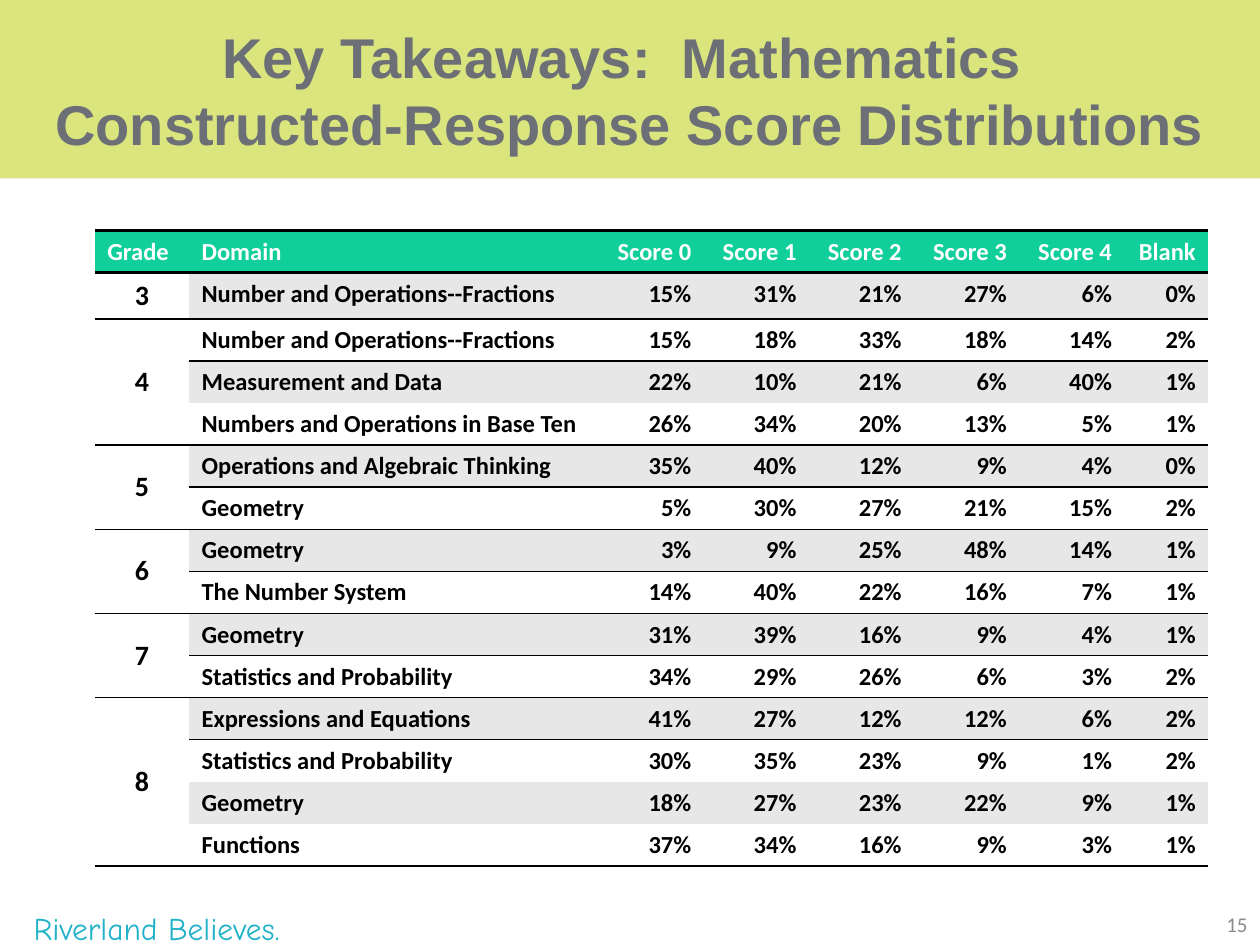
from copy import deepcopy
from dataclasses import dataclass

from lxml import etree
from pptx import Presentation
from pptx.dml.color import RGBColor
from pptx.enum.shapes import MSO_SHAPE
from pptx.enum.text import MSO_ANCHOR, MSO_AUTO_SIZE, PP_ALIGN
from pptx.oxml.ns import qn
from pptx.util import Cm, Pt

LEFT, CENTER, RIGHT = PP_ALIGN.LEFT, PP_ALIGN.CENTER, PP_ALIGN.RIGHT
TOP, MIDDLE = MSO_ANCHOR.TOP, MSO_ANCHOR.MIDDLE
NO_GRID_STYLE = "{2D5ABB26-0587-4C30-8999-92F81FD0307C}"


@dataclass
class Theme:
    band: str = "DAE57E"
    title: str = "6D6F77"
    header: str = "10CF9B"
    stripe: str = "E7E7E7"
    white: str = "FFFFFF"
    black: str = "000000"
    page_number: str = "8C8C8C"
    motto: str = "21B2C9"
    title_size: int = 32
    motto_size: int = 18
    grade_size: int = 16
    table_size: int = 14
    page_size: int = 12


theme = Theme()


def write(frame, text, size=theme.table_size, color=theme.black, font="Calibri",
          bold=False, align=LEFT, anchor=TOP):
    frame.word_wrap = True
    frame.vertical_anchor = anchor
    paragraph = frame.paragraphs[0]
    paragraph.text = text
    paragraph.alignment = align
    for run in paragraph.runs:
        run.font.name, run.font.size, run.font.bold = font, Pt(size), bold
        run.font.color.rgb = RGBColor.from_string(color)
    # Line breaks take the size of the text around them
    for line_break in paragraph._p.findall(qn("a:br")):
        line_break.append(deepcopy(paragraph.runs[0]._r.rPr))


def rule(cell, side, points):
    line = etree.SubElement(cell._tc.get_or_add_tcPr(), qn(f"a:ln{side}"), w=str(Pt(points)))
    fill = etree.SubElement(line, qn("a:solidFill"))
    etree.SubElement(fill, qn("a:srgbClr"), val=theme.black)


prs = Presentation()
prs.slide_width, prs.slide_height = Cm(25.4), Cm(19.05)
slide = prs.slides.add_slide(prs.slide_layouts[5])
shapes = slide.shapes

# Title over a full-width band
band = shapes.add_shape(MSO_SHAPE.RECTANGLE, 0, 0, prs.slide_width, Cm(3.6))
band.shadow.inherit = False
band.fill.solid()
band.fill.fore_color.rgb = RGBColor.from_string(theme.band)
band.line.fill.background()
title = shapes.title
title.left, title.top, title.width, title.height = 0, 0, prs.slide_width, Cm(3.6)
band._element.addnext(title._element)
title.text_frame.auto_size = MSO_AUTO_SIZE.NONE
write(title.text_frame,
      "Key Takeaways:  Mathematics \vConstructed-Response Score Distributions",
      size=theme.title_size, color=theme.title, font="Arial", bold=True,
      align=CENTER, anchor=MIDDLE)

# Footer
page_number = shapes.add_textbox(Cm(19.48), Cm(18.2), Cm(5.92), Cm(0.85))
write(page_number.text_frame, "15", size=theme.page_size, color=theme.page_number,
      align=RIGHT, anchor=MIDDLE)
motto = shapes.add_textbox(Cm(0.43), Cm(18.2), Cm(8.05), Cm(0.85))
write(motto.text_frame, "Riverland Believes.", size=theme.motto_size,
      color=theme.motto, font="Comic Neue")

# Score shares in percent: score 0 to 4, then blank
headings = ["Grade", "Domain", *(f"Score {score}" for score in range(5)), "Blank"]
grades = {
    "3": [("Number and Operations--Fractions", 15, 31, 21, 27, 6, 0)],
    "4": [("Number and Operations--Fractions", 15, 18, 33, 18, 14, 2),
          ("Measurement and Data", 22, 10, 21, 6, 40, 1),
          ("Numbers and Operations in Base Ten", 26, 34, 20, 13, 5, 1)],
    "5": [("Operations and Algebraic Thinking", 35, 40, 12, 9, 4, 0),
          ("Geometry", 5, 30, 27, 21, 15, 2)],
    "6": [("Geometry", 3, 9, 25, 48, 14, 1),
          ("The Number System", 14, 40, 22, 16, 7, 1)],
    "7": [("Geometry", 31, 39, 16, 9, 4, 1),
          ("Statistics and Probability", 34, 29, 26, 6, 3, 2)],
    "8": [("Expressions and Equations", 41, 27, 12, 12, 6, 2),
          ("Statistics and Probability", 30, 35, 23, 9, 1, 2),
          ("Geometry", 18, 27, 23, 22, 9, 1),
          ("Functions", 37, 34, 16, 9, 3, 1)],
}
column_widths = [1.9, 8.26, *[2.12] * 5, 1.69]
row_heights = [0.79] + [0.74] * sum(len(domains) for domains in grades.values())

score_frame = shapes.add_table(len(row_heights), len(headings), Cm(1.91), Cm(4.65),
                               Cm(sum(column_widths)), Cm(sum(row_heights)))
scores = score_frame.table
scores._tbl.tblPr.find(qn("a:tableStyleId")).text = NO_GRID_STYLE
for column, width in zip(scores.columns, column_widths):
    column.width = Cm(width)
for table_row, height in zip(scores.rows, row_heights):
    table_row.height = Cm(height)

# Header row
for col, heading in enumerate(headings):
    cell = scores.cell(0, col)
    rule(cell, "T", 2)
    rule(cell, "B", 2)
    cell.fill.solid()
    cell.fill.fore_color.rgb = RGBColor.from_string(theme.header)
    write(cell.text_frame, heading, color=theme.white, bold=True,
          align=RIGHT if col > 1 else LEFT)

# One merged grade cell per group; rules under its first and last rows
row = 1
for grade, domains in grades.items():
    last = row + len(domains) - 1
    grade_cell = scores.cell(row, 0)
    if last > row:
        grade_cell.merge(scores.cell(last, 0))
    if row > 1:
        rule(grade_cell, "T", 1)
    rule(grade_cell, "B", 1)
    grade_cell.fill.solid()
    grade_cell.fill.fore_color.rgb = RGBColor.from_string(theme.white)
    write(grade_cell.text_frame, grade, size=theme.grade_size, bold=True, align=CENTER)
    grade_cell.vertical_anchor = MIDDLE

    first = row
    for domain, *shares in domains:
        for col, text in enumerate([domain, *(f"{share}%" for share in shares)], start=1):
            cell = scores.cell(row, col)
            if row in (first, last):
                rule(cell, "B", 1)
            cell.fill.solid()
            cell.fill.fore_color.rgb = RGBColor.from_string(
                theme.stripe if row % 2 else theme.white)
            write(cell.text_frame, text, bold=True, align=RIGHT if col > 1 else LEFT)
        row += 1

prs.save("out.pptx")
